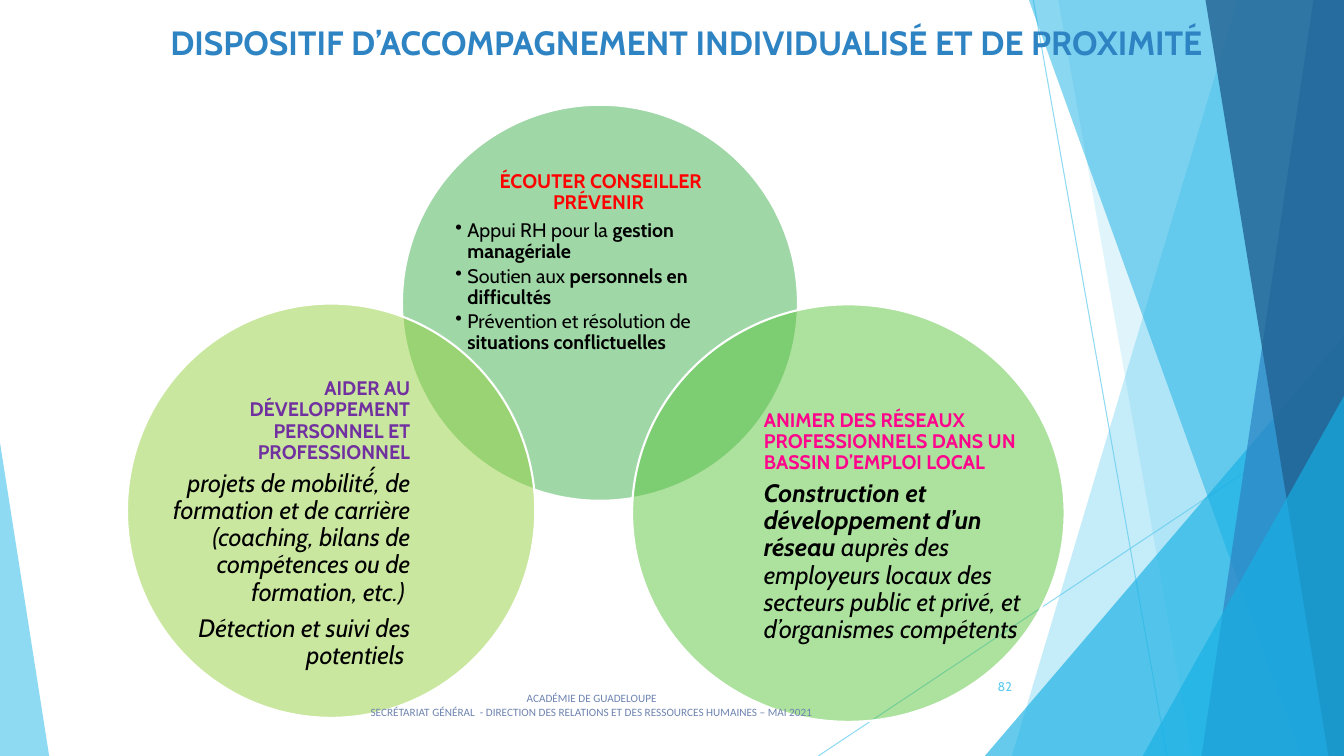
from lxml.etree import SubElement
from pptx import Presentation
from pptx.dml.color import RGBColor
from pptx.enum.shapes import MSO_CONNECTOR, MSO_SHAPE
from pptx.enum.text import MSO_ANCHOR, PP_ALIGN
from pptx.oxml.ns import qn
from pptx.util import Cm, Pt

WIDTH, HEIGHT = 33.87, 19.05

THEME = {
    "font": "Cabin", "footer_font": "Calibri",
    "title": 24, "heading": 14, "body": 18, "number": 9, "footer": 8,
    "black": "000000", "white": "FFFFFF", "red": "FF0000", "pink": "FF038C",
    "purple": "7030A0", "slate": "6D83B0",
    "sky": "5FCBEF", "cyan": "17B0E4", "blue": "2E83C3", "navy": "226292",
    "green": "42B051", "leaf": "5CC43E", "lime": "96D141",
}

TITLE = "DISPOSITIF D’ACCOMPAGNEMENT INDIVIDUALISÉ ET DE PROXIMITÉ"
FOOTER = ["ACADÉMIE DE GUADELOUPE",
          "SECRÉTARIAT GÉNÉRAL  - DIRECTION DES RELATIONS ET DES RESSOURCES HUMAINES – MAI 2021"]
PAGE = "82"

MISSIONS = [
    {"circle": (10.13, 2.64, 9.98, 9.98), "fill": "green",
     "area": (11.48, 4.37, 7.32, 4.5), "align": PP_ALIGN.CENTER,
     "heading": "ÉCOUTER CONSEILLER PRÉVENIR ", "color": "red",
     "bullets": [
         [("Appui RH pour la ", False), ("gestion managériale", True)],
         [("Soutien aux ", False), ("personnels en difficultés", True)],
         [("Prévention et résolution de ", False), ("situations conflictuelles", True)]]},
    {"circle": (15.93, 7.67, 10.9, 10.52), "fill": "leaf",
     "area": (19.25, 10.39, 6.53, 5.79), "align": PP_ALIGN.LEFT,
     "heading": "ANIMER DES RÉSEAUX PROFESSIONNELS DANS UN BASSIN D’EMPLOI LOCAL",
     "color": "pink",
     "body": [
         [("Construction et développement d’un réseau ", True),
          ("auprès des employeurs locaux des secteurs public et privé, "
           "et d’organismes compétents", False)]]},
    {"circle": (3.2, 7.65, 10.29, 10.44), "fill": "lime",
     "area": (4.17, 10.34, 6.17, 5.74), "align": PP_ALIGN.RIGHT,
     "heading": "AIDER AU DÉVELOPPEMENT PERSONNEL ET PROFESSIONNEL", "color": "purple",
     "body": [
         [("projets de mobilité́, de formation et de carrière "
           "(coaching, bilans de compétences ou de formation, etc.) ", False)],
         [("Détection et suivi des potentiels ", False)]]},
]

RAYS = [((26.04, 0), (29.41, HEIGHT)), ((WIDTH, 10.24), (20.62, HEIGHT))]
FACETS = [
    {"band": (31.19, 25.5), "fill": "sky", "alpha": 36},
    {"band": (26.67, 30.05), "fill": "sky", "alpha": 20},
    {"peak": (24.82, 8.46, WIDTH), "apex": 1, "fill": "cyan", "alpha": 66},
    {"band": (25.93, 32.79), "fill": "cyan", "alpha": 50},
    {"band": (33.1, 30.28), "fill": "blue", "alpha": 70},
    {"band": (30.38, 33.48), "fill": "navy", "alpha": 80},
    {"peak": (28.8, 9.98, WIDTH), "apex": 1, "fill": "cyan", "alpha": 66},
    {"peak": (0, 11.15, 1.24), "apex": 0, "fill": "sky", "alpha": 70},
]


def rgb(name):
    return RGBColor.from_string(THEME[name])


def set_alpha(owner, percent):
    for color in owner.iter(qn("a:srgbClr")):
        SubElement(color, qn("a:alpha")).set("val", str(percent * 1000))


def paint(shape, fill, alpha, outline=None):
    shape.shadow.inherit = False
    shape.fill.solid()
    shape.fill.fore_color.rgb = rgb(fill)
    set_alpha(shape.fill._xPr, alpha)
    if outline:
        shape.line.color.rgb = rgb(outline)
        shape.line.width = Pt(1.5)
    else:
        shape.line.fill.background()


def add_ray(slide, start, end):
    ray = slide.shapes.add_connector(
        MSO_CONNECTOR.STRAIGHT, *(Cm(value) for value in start + end))
    ray.line.color.rgb = rgb("sky")
    ray.line.width = Pt(0.75)
    properties = ray._element.spPr
    set_alpha(properties, 70)
    SubElement(properties, qn("a:effectLst"))


def add_facet(slide, facet):
    if "band" in facet:
        top, bottom = facet["band"]
        outline = slide.shapes.build_freeform(Cm(top), 0, scale=1.0)
        outline.add_line_segments(
            [(Cm(x), Cm(y)) for x, y in ((WIDTH, 0), (WIDTH, HEIGHT), (bottom, HEIGHT))])
        shape = outline.convert_to_shape()
    else:
        left, top, right = facet["peak"]
        shape = slide.shapes.add_shape(MSO_SHAPE.ISOSCELES_TRIANGLE, Cm(left), Cm(top),
                                       Cm(right - left), Cm(HEIGHT - top))
        shape.adjustments[0] = facet["apex"]
    paint(shape, facet["fill"], facet["alpha"])


def add_text(frame, text, size, color, align=PP_ALIGN.LEFT, bold=False, italic=False,
             font="font", line=None, after=0, bullet=False, first=False):
    paragraph = frame.paragraphs[0] if first else frame.add_paragraph()
    paragraph.alignment = align
    paragraph.line_spacing = line
    paragraph.space_after = Pt(after * THEME[size])
    if bullet:
        paragraph.level = 1
        properties = paragraph._p.get_or_add_pPr()
        properties.set("marL", str(Cm(0.3)))
        properties.set("indent", str(-Cm(0.3)))
        SubElement(properties, qn("a:buChar")).set("char", "•")
    for words, strong in [(text, bold)] if isinstance(text, str) else text:
        run = paragraph.add_run()
        run.text = words
        run.font.name = THEME[font]
        run.font.size = Pt(THEME[size])
        run.font.color.rgb = rgb(color)
        run.font.bold = strong
        run.font.italic = italic


def add_frame(slide, area, anchor=MSO_ANCHOR.TOP, inset=True):
    frame = slide.shapes.add_textbox(*(Cm(value) for value in area)).text_frame
    frame.word_wrap = True
    frame.vertical_anchor = anchor
    if not inset:
        frame.margin_left = frame.margin_right = frame.margin_top = frame.margin_bottom = 0
    return frame


def add_mission(slide, mission):
    circle = slide.shapes.add_shape(MSO_SHAPE.OVAL, *(Cm(value) for value in mission["circle"]))
    paint(circle, mission["fill"], 50, "white")
    frame = add_frame(slide, mission["area"], MSO_ANCHOR.MIDDLE, inset=False)
    add_text(frame, mission["heading"], "heading", mission["color"], align=mission["align"],
             bold=True, line=0.9, after=0.35, first=True)
    for item in mission.get("bullets", []):
        add_text(frame, item, "heading", "black", line=0.9, after=0.15, bullet=True)
    for item in mission.get("body", []):
        add_text(frame, item, "body", "black", align=mission["align"], italic=True,
                 line=0.9, after=0.35)


def main():
    deck = Presentation()
    deck.slide_width, deck.slide_height = Cm(WIDTH), Cm(HEIGHT)
    slide = deck.slides.add_slide(deck.slide_layouts[6])
    for start, end in RAYS:
        add_ray(slide, start, end)
    for facet in FACETS:
        add_facet(slide, facet)
    add_text(add_frame(slide, (3.96, 0.43, 26.67, 1.85)), TITLE, "title", "blue",
             align=PP_ALIGN.CENTER, bold=True, first=True)
    for mission in MISSIONS:
        add_mission(slide, mission)
    add_text(add_frame(slide, (23.85, 16.79, 1.9, 1.02), MSO_ANCHOR.MIDDLE), PAGE,
             "number", "sky", align=PP_ALIGN.RIGHT, first=True)
    footer = add_frame(slide, (8.31, 17.3, 13.21, 1.32))
    for index, row in enumerate(FOOTER):
        add_text(footer, row, "footer", "slate", align=PP_ALIGN.CENTER,
                 font="footer_font", first=index == 0)
    deck.save("out.pptx")


if __name__ == "__main__":
    main()
